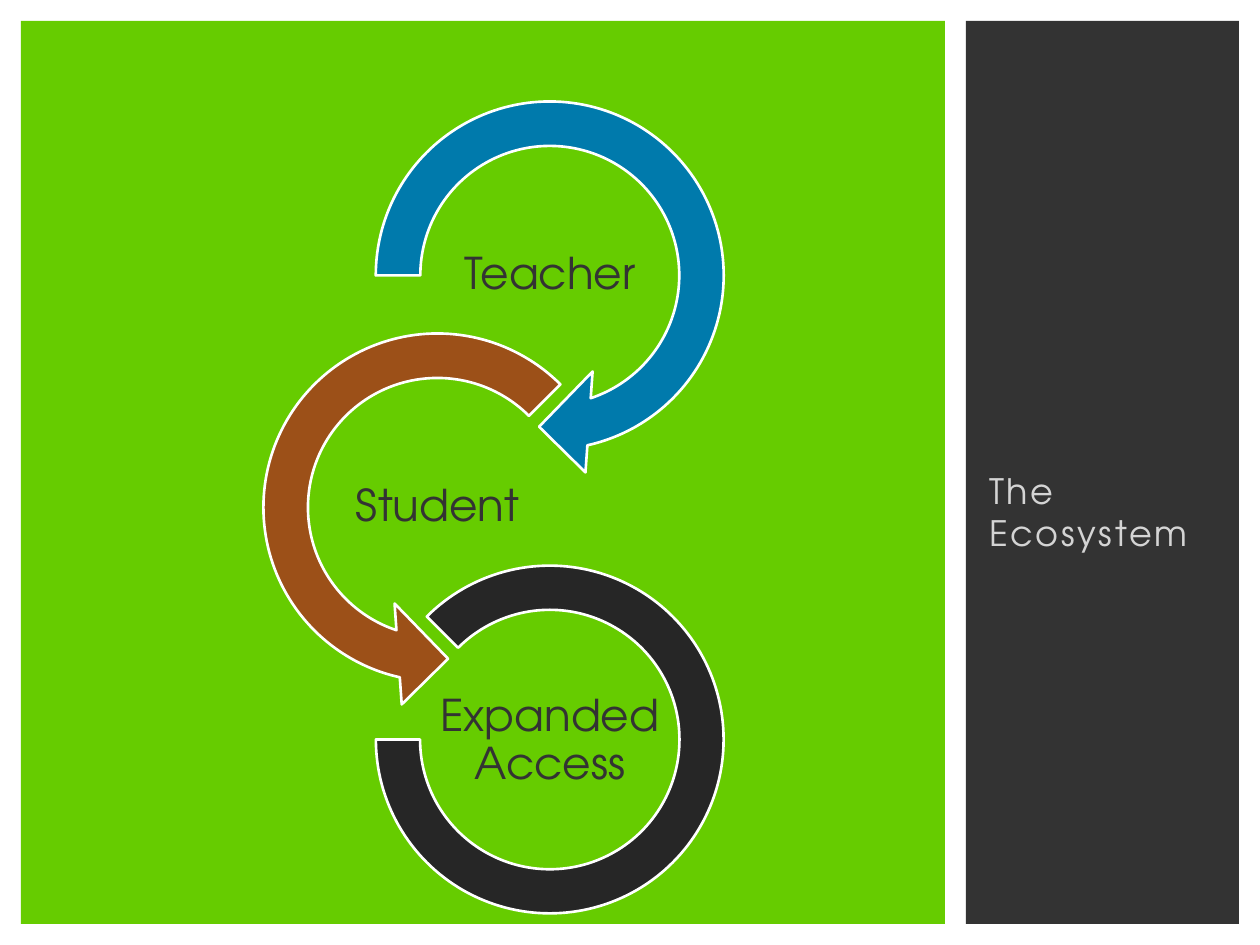
from pptx import Presentation
from pptx.dml.color import RGBColor
from pptx.enum.shapes import MSO_SHAPE as Shape
from pptx.enum.text import MSO_ANCHOR as Anchor, PP_ALIGN as Align
from pptx.util import Pt

WHITE = RGBColor(0xFF, 0xFF, 0xFF)
GREEN = RGBColor(0x66, 0xCC, 0x00)
CHARCOAL = RGBColor(0x33, 0x33, 0x33)
BLACK = RGBColor(0x26, 0x26, 0x26)
BLUE = RGBColor(0x00, 0x7A, 0xAC)
BROWN = RGBColor(0x9C, 0x50, 0x18)
SILVER = RGBColor(0xD4, 0xD4, 0xD4)
FONT = "TeX Gyre Adventor"

PANEL_TOP, PANEL_HEIGHT = 12, 516
ARROW_SIZE, ARC_SIZE = 231.2, 198.7
LABEL_WIDTH, LABEL_HEIGHT = 128, 64
RIGHT_CENTER, LEFT_CENTER = 314.2, 250
FIRST_CENTER, RING_STEP = 157.4, 132.6
LABEL_OFFSETS = (0, 0, 12)

RINGS = [
    ("Teacher", Shape.CIRCULAR_ARROW, RIGHT_CENTER, ARROW_SIZE, BLUE,
     (0.11, 11.423, 45, 108, 0.125)),
    ("Student", Shape.LEFT_CIRCULAR_ARROW, LEFT_CENTER, ARROW_SIZE, BROWN,
     (0.11, 11.423, 63, 189, 0.125)),
    ("Expanded Access", Shape.BLOCK_ARC, RIGHT_CENTER, ARC_SIZE, BLACK,
     (135, 108, 0.127)),
]


def add_filled(page, kind, left, top, width, height, color):
    shape = page.shapes.add_shape(kind, Pt(left), Pt(top), Pt(width), Pt(height))
    shape.shadow.inherit = False
    shape.fill.solid()
    shape.fill.fore_color.rgb = color
    shape.line.fill.background()
    return shape


def add_ring(page, kind, center_x, center_y, size, color, adjustments):
    ring = add_filled(page, kind, center_x - size / 2, center_y - size / 2,
                      size, size, color)
    ring.line.color.rgb = WHITE
    ring.line.width = Pt(1.5)
    for index, value in enumerate(adjustments):
        ring.adjustments[index] = value


def write_text(frame, text, size, color):
    frame.word_wrap = True
    frame.vertical_anchor = Anchor.MIDDLE
    frame.text = text
    para = frame.paragraphs[0]
    para.space_before = Pt(0)
    span = para.runs[0]
    span.font.name = FONT
    span.font.size = Pt(size)
    span.font.color.rgb = color
    return para


def add_label(page, text, center_x, center_y):
    box = page.shapes.add_textbox(
        Pt(center_x - LABEL_WIDTH / 2), Pt(center_y - LABEL_HEIGHT / 2),
        Pt(LABEL_WIDTH), Pt(LABEL_HEIGHT))
    frame = box.text_frame
    frame.margin_left = frame.margin_right = Pt(1.25)
    frame.margin_top = frame.margin_bottom = Pt(1.25)
    para = write_text(frame, text, 25, CHARCOAL)
    para.alignment = Align.CENTER
    para.line_spacing = 0.9


def fill_caption(page):
    title = page.shapes.title
    title.element.getparent().remove(title.element)
    caption = page.placeholders[1]
    caption.left, caption.top = Pt(558), Pt(227.5)
    caption.width, caption.height = Pt(132), Pt(129.6)
    para = write_text(caption.text_frame, "The Ecosystem", 20, SILVER)
    para.alignment = Align.LEFT
    para.runs[0]._r.get_or_add_rPr().set("spc", "150")
    page.shapes._spTree.append(caption.element)


def main():
    deck = Presentation()
    deck.slide_width, deck.slide_height = Pt(720), Pt(540)
    page = deck.slides.add_slide(deck.slide_layouts[2])
    for left, width, color in ((552, 156, CHARCOAL), (12, 528, GREEN)):
        add_filled(page, Shape.RECTANGLE, left, PANEL_TOP, width, PANEL_HEIGHT, color)
    fill_caption(page)
    for index, (text, kind, center_x, size, color, adjustments) in enumerate(RINGS):
        center_y = FIRST_CENTER + index * RING_STEP
        add_ring(page, kind, center_x, center_y, size, color, adjustments)
        add_label(page, text, center_x, center_y + LABEL_OFFSETS[index] - 11 * (index == 2))
    deck.save("out.pptx")


if __name__ == "__main__":
    main()
